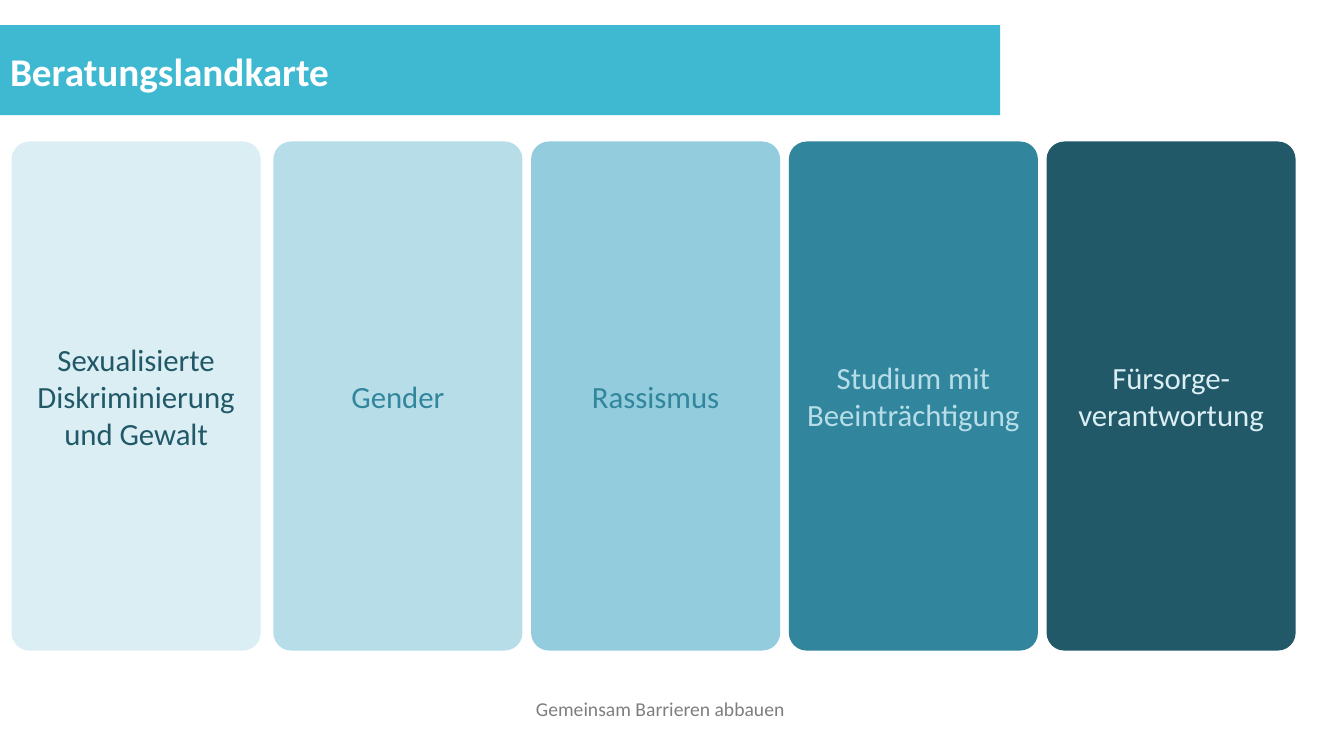
from pptx import Presentation
from pptx.dml.color import RGBColor
from pptx.enum import shapes, text
from pptx.util import Pt

FONT = "Calibri"
COLORS = {
    "banner": "3FB9D2",
    "white": "FFFFFF",
    "palest": "DBEEF4",
    "pale": "B7DEE8",
    "light": "93CDDD",
    "teal": "31859C",
    "dark": "215968",
    "footer": "7E7E7E",
}
TOPICS = [
    ("Sexualisierte Diskriminierung und Gewalt", "palest", "dark"),
    ("Gender", "pale", "teal"),
    ("Rassismus", "light", "teal"),
    ("Studium mit Beeinträchtigung", "teal", "pale"),
    ("Fürsorge-verantwortung", "dark", "palest"),
]
FIRST_LEFT, SECOND_LEFT, CARD_PITCH = 9.4, 196.4, 184.1


def rgb(name):
    return RGBColor.from_string(COLORS[name])


def write(paragraph, words, size, color, alignment, bold=False):
    paragraph.alignment = alignment
    run = paragraph.add_run()
    run.text = words
    run.font.name = FONT
    run.font.size = Pt(size)
    run.font.bold = bold
    run.font.color.rgb = rgb(color)


def add_banner(slide):
    banner = slide.shapes.add_shape(
        shapes.MSO_SHAPE.RECTANGLE, Pt(0), Pt(18), Pt(714.4), Pt(64.2))
    banner.shadow.inherit = False
    banner.fill.solid()
    banner.fill.fore_color.rgb = rgb("banner")
    banner.line.fill.background()
    return banner


def place_title(slide, banner, words):
    """Move the title placeholder onto the banner and fill it in."""
    title = slide.shapes.title
    title.left, title.top = Pt(0), Pt(30.2)
    title.width, title.height = Pt(263), Pt(41.2)
    banner.element.addnext(title.element)
    frame = title.text_frame
    frame.word_wrap = True
    frame.auto_size = text.MSO_AUTO_SIZE.NONE
    frame.vertical_anchor = text.MSO_ANCHOR.TOP
    write(frame.paragraphs[0], words, 28, "white", text.PP_ALIGN.LEFT, True)


def add_card(slide, left, words, fill, color):
    card = slide.shapes.add_shape(
        shapes.MSO_SHAPE.ROUNDED_RECTANGLE,
        Pt(left), Pt(102.2), Pt(175.7), Pt(361.4))
    card.adjustments[0] = 0.066
    card.shadow.inherit = False
    card.fill.solid()
    card.fill.fore_color.rgb = rgb(fill)
    card.line.color.rgb = rgb(fill)
    card.line.width = Pt(2.25)
    frame = card.text_frame
    frame.word_wrap = True
    frame.vertical_anchor = text.MSO_ANCHOR.MIDDLE
    write(frame.paragraphs[0], words, 22, color, text.PP_ALIGN.CENTER)


def add_footer(slide, words):
    footer = slide.shapes.add_textbox(Pt(308.2), Pt(505.4), Pt(327), Pt(10.8))
    frame = footer.text_frame
    frame.word_wrap = True
    frame.margin_left = frame.margin_right = Pt(0)
    frame.margin_top = frame.margin_bottom = Pt(0)
    paragraph = frame.paragraphs[0]
    paragraph.line_spacing = Pt(9.1)
    write(paragraph, words, 14, "footer", text.PP_ALIGN.CENTER)


def main():
    presentation = Presentation()
    presentation.slide_width = Pt(960)
    presentation.slide_height = Pt(540)
    title_only = presentation.slide_layouts[5]
    slide = presentation.slides.add_slide(title_only)
    banner = add_banner(slide)
    place_title(slide, banner, "Beratungslandkarte")
    for index, (words, fill, color) in enumerate(TOPICS):
        left = SECOND_LEFT + CARD_PITCH * (index - 1) if index else FIRST_LEFT
        add_card(slide, left, words, fill, color)
    add_footer(slide, "Gemeinsam Barrieren abbauen")
    presentation.save("out.pptx")


if __name__ == "__main__":
    main()
